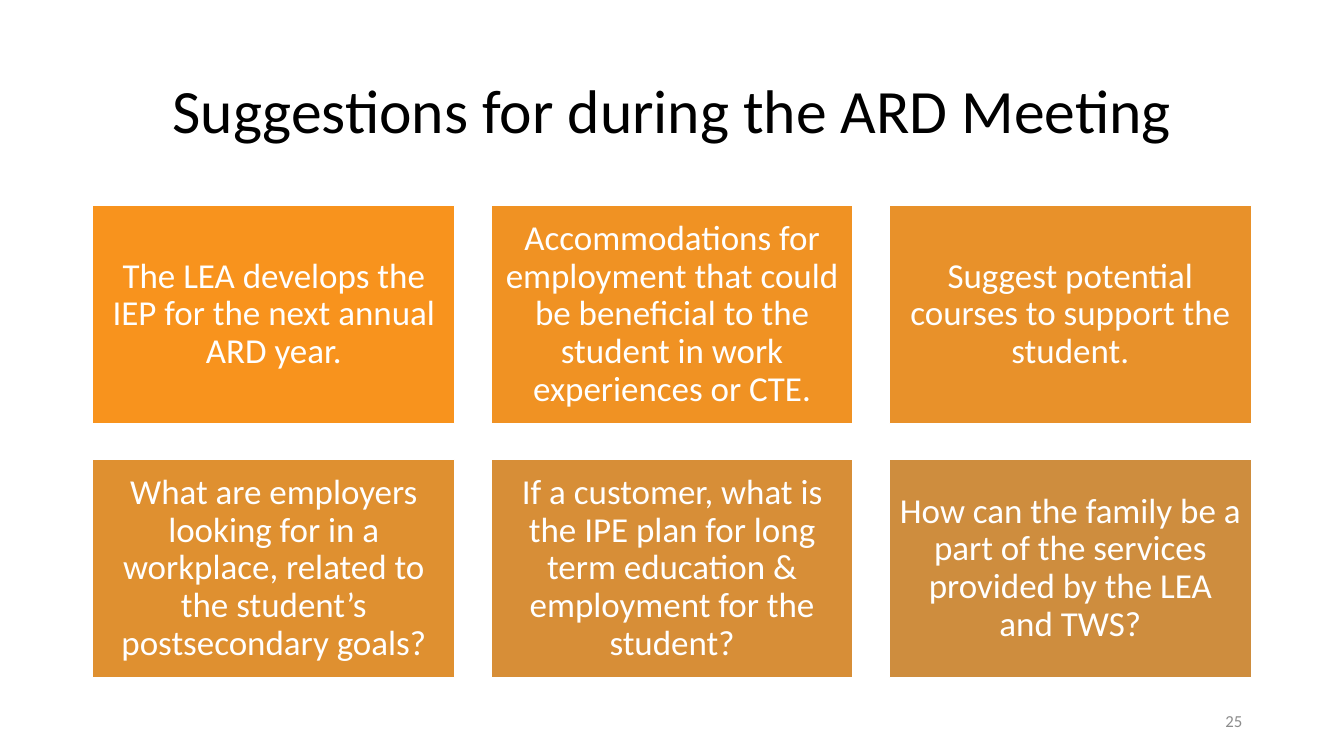
"""Build a slide with a title, six suggestion cards in a grid and a page number."""
from pptx import Presentation
from pptx.dml.color import RGBColor
from pptx.enum.shapes import MSO_SHAPE
from pptx.enum.text import MSO_ANCHOR, PP_ALIGN
from pptx.util import Inches, Pt

BLACK = RGBColor(0x00, 0x00, 0x00)
WHITE = RGBColor(0xFF, 0xFF, 0xFF)
GRAY = RGBColor(0x8C, 0x8C, 0x8C)

LEFT, TOP = 0.92, 2.04
CARD_WIDTH, CARD_HEIGHT = 3.59, 2.16
GAP = 0.36
COLUMNS = 3

TITLE_FORMAT = {"size": Pt(44), "name": "Calibri"}
CARD_FORMAT = {"size": Pt(25), "name": "Calibri"}
NUMBER_FORMAT = {"size": Pt(12), "name": "Calibri"}

CARDS = [
    ("The LEA develops the IEP for the next annual ARD year.",
     RGBColor(0xF8, 0x93, 0x1D)),
    ("Accommodations for employment that could be beneficial to the student "
     "in work experiences or CTE.", RGBColor(0xF0, 0x92, 0x23)),
    ("Suggest potential courses to support the student.",
     RGBColor(0xE8, 0x91, 0x2A)),
    ("What are employers looking for in a workplace, related to the "
     "student’s postsecondary goals?", RGBColor(0xDF, 0x90, 0x30)),
    ("If a customer, what is the IPE plan for long term education & "
     "employment for the student?", RGBColor(0xD7, 0x8E, 0x37)),
    ("How can the family be a part of the services provided by the LEA "
     "and TWS?", RGBColor(0xCE, 0x8D, 0x3E)),
]


def write_text(shape, text, color, font_format, alignment=PP_ALIGN.CENTER, line_spacing=0.9):
    """Fill a shape with one formatted, vertically centred paragraph."""
    frame = shape.text_frame
    frame.word_wrap = True
    frame.vertical_anchor = MSO_ANCHOR.MIDDLE
    paragraph = frame.paragraphs[0]
    paragraph.text = text
    paragraph.alignment = alignment
    paragraph.line_spacing = line_spacing
    for attribute, value in font_format.items():
        setattr(paragraph.font, attribute, value)
    paragraph.font.color.rgb = color


presentation = Presentation()
presentation.slide_width = Inches(13.33)
presentation.slide_height = Inches(7.5)
slide = presentation.slides.add_slide(presentation.slide_layouts[6])

title = slide.shapes.add_textbox(Inches(LEFT), Inches(0.4), Inches(11.5), Inches(1.45))
write_text(title, "Suggestions for during the ARD Meeting", BLACK, TITLE_FORMAT)

for index, (text, color) in enumerate(CARDS):
    row, column = divmod(index, COLUMNS)
    card = slide.shapes.add_shape(
        MSO_SHAPE.RECTANGLE,
        Inches(LEFT + column * (CARD_WIDTH + GAP)),
        Inches(TOP + row * (CARD_HEIGHT + GAP)),
        Inches(CARD_WIDTH), Inches(CARD_HEIGHT))
    card.shadow.inherit = False
    card.fill.solid()
    card.fill.fore_color.rgb = color
    card.line.color.rgb = WHITE
    card.line.width = Pt(1)
    for side in ("left", "top", "right", "bottom"):
        setattr(card.text_frame, f"margin_{side}", Inches(0.1))
    write_text(card, text, WHITE, CARD_FORMAT)

page_number = slide.shapes.add_textbox(Inches(9.42), Inches(6.95), Inches(3), Inches(0.4))
write_text(page_number, "25", GRAY, NUMBER_FORMAT, PP_ALIGN.RIGHT, 1.0)

presentation.save("out.pptx")
